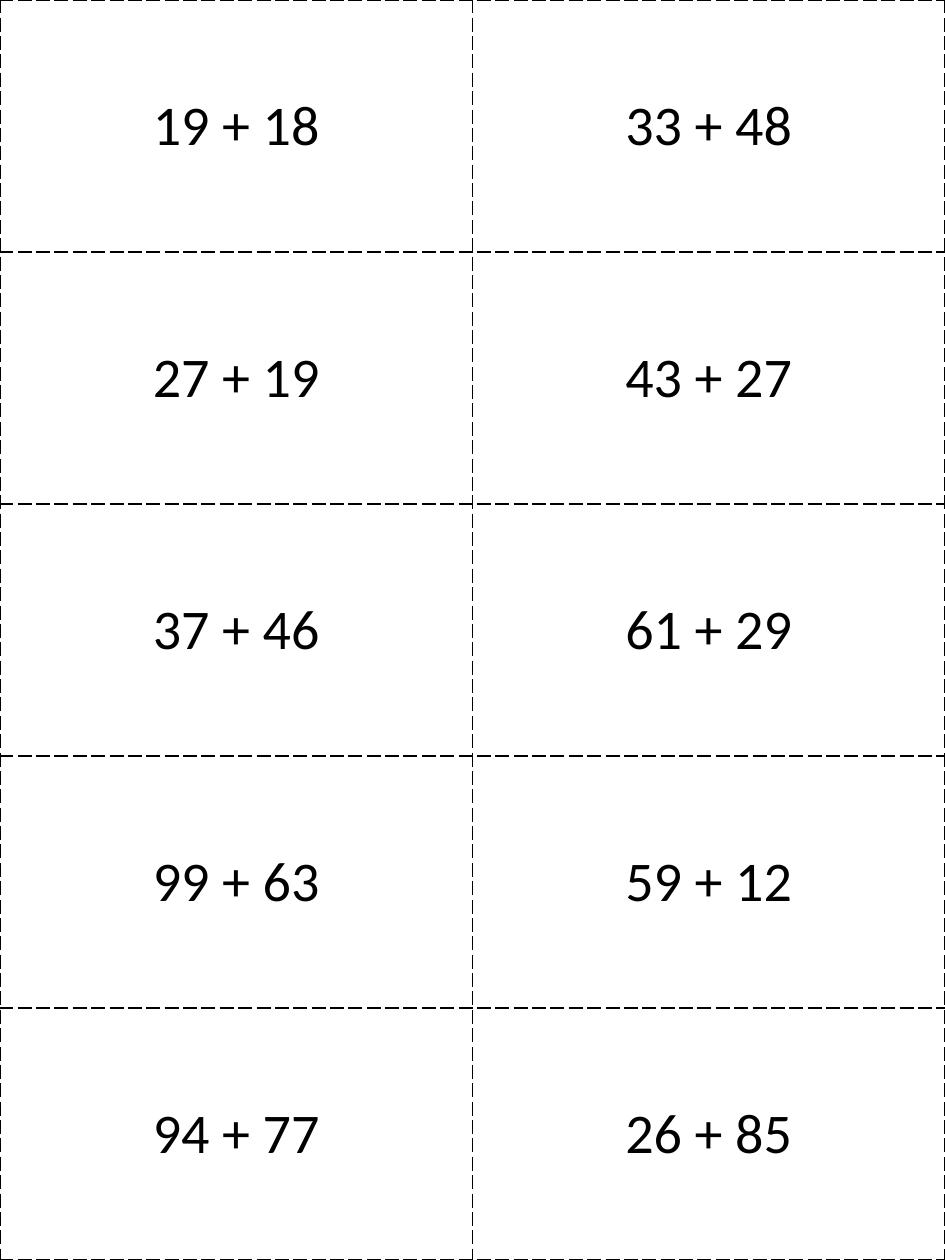
from lxml.etree import SubElement
from pptx import Presentation
from pptx.dml.color import RGBColor
from pptx.enum.text import MSO_ANCHOR, PP_ALIGN
from pptx.oxml.ns import qn
from pptx.util import Inches, Pt

BLACK = RGBColor(0x00, 0x00, 0x00)
FONT = {"name": "Calibri", "size": Pt(32), "bold": False}
SUMS = [
    ("19 + 18", "33 + 48"),
    ("27 + 19", "43 + 27"),
    ("37 + 46", "61 + 29"),
    ("99 + 63", "59 + 12"),
    ("94 + 77", "26 + 85"),
]


def add_dashed_borders(cell):
    tc_pr = cell._tc.get_or_add_tcPr()
    for side in ("a:lnL", "a:lnR", "a:lnT", "a:lnB"):
        ln = SubElement(tc_pr, qn(side), w=str(Pt(1)))
        fill = SubElement(ln, qn("a:solidFill"))
        SubElement(fill, qn("a:srgbClr"), val=str(BLACK))
        SubElement(ln, qn("a:prstDash"), val="lgDash")


prs = Presentation()
prs.slide_width, prs.slide_height = Inches(7.5), Inches(10)
s = prs.slides.add_slide(prs.slide_layouts[6])

# Sheet of cards filling the slide
table = s.shapes.add_table(
    len(SUMS), len(SUMS[0]), 0, 0, prs.slide_width, prs.slide_height
).table
table.first_row = table.horz_banding = False

# One sum per card
for row, sums in enumerate(SUMS):
    for col, text in enumerate(sums):
        cell = table.cell(row, col)
        add_dashed_borders(cell)
        cell.fill.background()
        cell.vertical_anchor = MSO_ANCHOR.MIDDLE
        p = cell.text_frame.paragraphs[0]
        p.alignment = PP_ALIGN.CENTER
        r = p.add_run()
        r.text = text
        for name, value in FONT.items():
            setattr(r.font, name, value)
        r.font.color.rgb = BLACK

prs.save("out.pptx")
